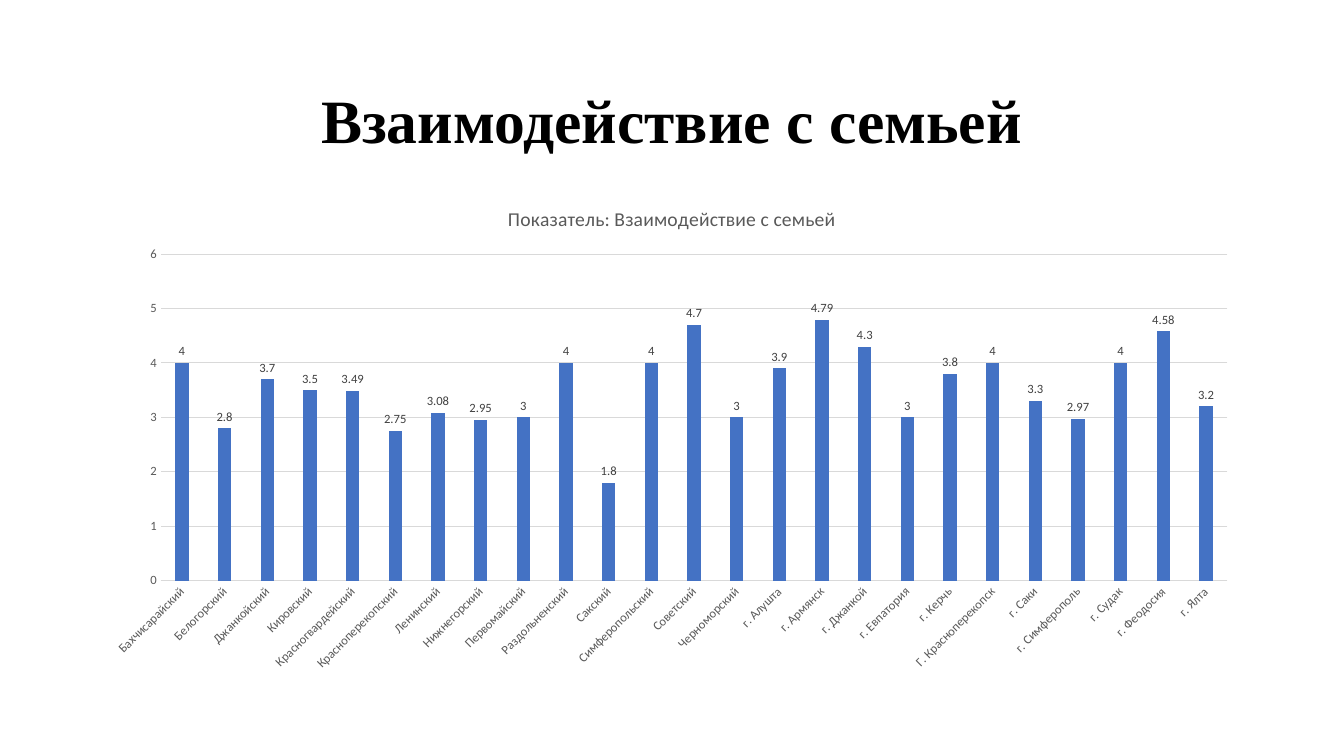
import pptx
import pptx.chart.data
import pptx.dml.color
import pptx.enum.chart
import pptx.enum.text
import pptx.oxml
import pptx.oxml.ns
import pptx.util

COLORS = {
    "heading": "000000",
    "bar": "4472C4",
    "axis_text": "595959",
    "label": "404040",
    "grid": "D9D9D9",
}

SCORES = {
    "Бахчисарайский": 4,
    "Белогорский": 2.8,
    "Джанкойский": 3.7,
    "Кировский": 3.5,
    "Красногвардейский": 3.49,
    "Красноперекопский": 2.75,
    "Ленинский": 3.08,
    "Нижнегорский": 2.95,
    "Первомайский": 3,
    "Раздольненский": 4,
    "Сакский": 1.8,
    "Симферопольский": 4,
    "Советский": 4.7,
    "Черноморский": 3,
    "г. Алушта": 3.9,
    "г. Армянск": 4.79,
    "г. Джанкой": 4.3,
    "г. Евпатория": 3,
    "г. Керчь": 3.8,
    "Г. Красноперекопск": 4,
    "г. Саки": 3.3,
    "г. Симферополь": 2.97,
    "г. Судак": 4,
    "г. Феодосия": 4.58,
    "г. Ялта": 3.2,
}


def px(length):
    return pptx.util.Emu(length * 9525)


class SlideBuilder:
    """Holds the style and the current slide, and adds its elements."""

    def __init__(self, slide, colors):
        self.slide = slide
        self.colors = colors

    def color(self, name):
        return pptx.dml.color.RGBColor.from_string(self.colors[name])

    def style(self, font, face, size, color, bold=False):
        font.name = face
        font.size = pptx.util.Pt(size)
        font.bold = bold
        font.color.rgb = self.color(color)

    def rule(self, line):
        line.color.rgb = self.color("grid")
        line.width = pptx.util.Pt(0.75)

    def heading(self, text, left, top, width, height):
        frame = self.slide.shapes.add_textbox(px(left), px(top), px(width), px(height)).text_frame
        frame.word_wrap = True
        frame.vertical_anchor = pptx.enum.text.MSO_ANCHOR.MIDDLE
        paragraph = frame.paragraphs[0]
        paragraph.alignment = pptx.enum.text.PP_ALIGN.CENTER
        paragraph.line_spacing = 1.15
        indents = paragraph._p.get_or_add_pPr()
        indents.set("marL", str(px(36)))
        indents.set("indent", str(px(-36)))
        run = paragraph.add_run()
        run.text = text
        self.style(run.font, "Times New Roman", 44, "heading", bold=True)

    def column_chart(self, title, scores, left, top, width, height, plot):
        data = pptx.chart.data.CategoryChartData()
        data.categories = list(scores)
        data.add_series("Series 1", list(scores.values()))
        chart = self.slide.shapes.add_chart(
            pptx.enum.chart.XL_CHART_TYPE.COLUMN_CLUSTERED,
            px(left), px(top), px(width), px(height), data,
        ).chart
        self.style(chart.font, "Calibri", 10, "heading")
        chart.has_legend = False
        chart.has_title = True
        run = chart.chart_title.text_frame.paragraphs[0].add_run()
        run.text = title
        self.style(run.font, "Calibri", 14, "axis_text")
        chart.chart_title.include_in_layout = False

        for axis in (chart.category_axis, chart.value_axis):
            axis.major_tick_mark = pptx.enum.chart.XL_TICK_MARK.NONE
            axis.minor_tick_mark = pptx.enum.chart.XL_TICK_MARK.NONE
            self.style(axis.tick_labels.font, "Calibri", 9, "axis_text")
        self.rule(chart.category_axis.format.line)
        chart.category_axis._element.txPr.bodyPr.set("rot", str(-45 * 60000))
        chart.value_axis.format.line.fill.background()
        chart.value_axis.minimum_scale = 0
        chart.value_axis.maximum_scale = 6
        chart.value_axis.major_unit = 1
        self.rule(chart.value_axis.major_gridlines.format.line)

        columns = chart.plots[0]
        columns.gap_width = 219
        columns.overlap = -27
        columns.vary_by_categories = False
        series = columns.series[0]
        series.format.fill.solid()
        series.format.fill.fore_color.rgb = self.color("bar")
        labels = series.data_labels
        labels.show_value = True
        labels.position = pptx.enum.chart.XL_LABEL_POSITION.OUTSIDE_END
        self.style(labels.font, "Calibri", 9, "label")
        self.place_plot(chart, plot, (width, height, width, height))

    def place_plot(self, chart, plot, frame):
        area = chart._chartSpace.chart.plotArea
        for layout in area.findall(pptx.oxml.ns.qn("c:layout")):
            area.remove(layout)
        edges = "".join(
            f'<c:{name} val="{length / whole:.4f}"/>'
            for name, length, whole in zip("xywh", plot, frame)
        )
        area.insert(0, pptx.oxml.parse_xml(
            f'<c:layout {pptx.oxml.ns.nsdecls("c")}><c:manualLayout>'
            '<c:layoutTarget val="inner"/><c:xMode val="edge"/><c:yMode val="edge"/>'
            f'{edges}</c:manualLayout></c:layout>'
        ))


def main():
    deck = pptx.Presentation()
    deck.slide_width = px(1280)
    deck.slide_height = px(720)
    builder = SlideBuilder(deck.slides.add_slide(deck.slide_layouts[6]), COLORS)
    builder.heading("Взаимодействие с семьей", 88, 38, 1104, 139)
    builder.column_chart(
        "Показатель: Взаимодействие с семьей", SCORES,
        88, 178, 1104, 471, plot=(65, 64, 1016, 311),
    )
    deck.save("out.pptx")


if __name__ == "__main__":
    main()
